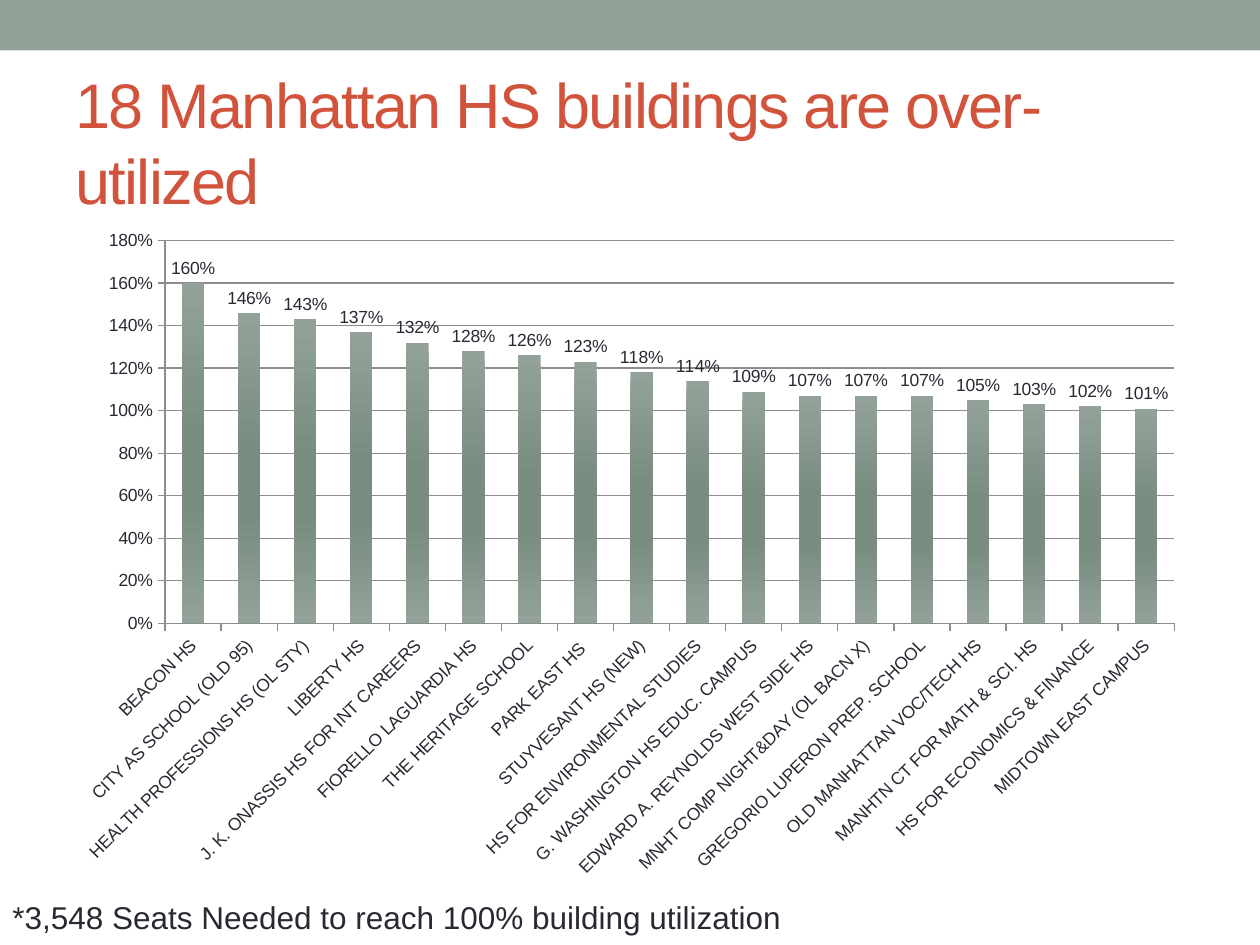
from dataclasses import dataclass

from lxml import etree
from pptx import Presentation
from pptx.chart.data import CategoryChartData
from pptx.dml.color import RGBColor
from pptx.enum.chart import XL_CHART_TYPE, XL_LABEL_POSITION, XL_TICK_MARK
from pptx.enum.shapes import MSO_SHAPE
from pptx.enum.text import MSO_ANCHOR, MSO_AUTO_SIZE, PP_ALIGN
from pptx.oxml import parse_xml
from pptx.oxml.ns import nsdecls, qn
from pptx.util import Inches, Pt

COLUMNS = XL_CHART_TYPE.COLUMN_CLUSTERED
ABOVE = XL_LABEL_POSITION.OUTSIDE_END
OUT, NO_TICK = XL_TICK_MARK.OUTSIDE, XL_TICK_MARK.NONE
RECTANGLE = MSO_SHAPE.RECTANGLE
MIDDLE, TOP = MSO_ANCHOR.MIDDLE, MSO_ANCHOR.TOP
LEFT = PP_ALIGN.LEFT
NO_FIT, GROW = MSO_AUTO_SIZE.NONE, MSO_AUTO_SIZE.SHAPE_TO_FIT_TEXT


@dataclass(frozen=True)
class Theme:
    font: str = "Arial"
    sage: str = "93A299"
    deep_sage: str = "788C80"
    red: str = "D2533C"
    ink: str = "292934"
    rule: str = "8C8C8C"
    title_size: int = 36
    note_size: int = 18
    chart_size: int = 10


THEME = Theme()
WIDTH, HEIGHT = Inches(10), Inches(7.5)
BAND_BOX = (0, 0, 1, 0.4 / 7.5)
TITLE_BOX = (0.05, 0.58 / 7.5, 0.9, 1.08 / 7.5)
CHART_BOX = (0.05, 1.75 / 7.5, 0.9, 5.33 / 7.5)
NOTE_BOX = (0, 7.08 / 7.5, 0.636, 0.4 / 7.5)
PLOT_SHARES = {"x": 0.09, "y": 0.03, "w": 0.89, "h": 0.57}

UTILIZATION = {
    "BEACON HS": 1.6,
    "CITY AS SCHOOL (OLD 95)": 1.46,
    "HEALTH PROFESSIONS HS (OL STY)": 1.43,
    "LIBERTY HS": 1.37,
    "J. K. ONASSIS HS FOR INT CAREERS": 1.32,
    "FIORELLO LAGUARDIA HS": 1.28,
    "THE HERITAGE SCHOOL": 1.26,
    "PARK EAST HS ": 1.23,
    "STUYVESANT HS (NEW)": 1.18,
    "HS FOR ENVIRONMENTAL STUDIES": 1.14,
    "G. WASHINGTON HS EDUC. CAMPUS": 1.09,
    "EDWARD A. REYNOLDS WEST SIDE HS": 1.07,
    "MNHT COMP NIGHT&DAY (OL BACN X)": 1.07,
    "GREGORIO LUPERON PREP. SCHOOL": 1.07,
    "OLD MANHATTAN VOC/TECH HS": 1.05,
    "MANHTN CT FOR MATH & SCI. HS": 1.03,
    "HS FOR ECONOMICS & FINANCE": 1.02,
    "MIDTOWN EAST CAMPUS": 1.01,
}


def apply(target, formats):
    for attribute, value in formats.items():
        setattr(target, attribute, value)


def place(box):
    left, top, width, height = box
    return (round(left * WIDTH), round(top * HEIGHT),
            round(width * WIDTH), round(height * HEIGHT))


def style_font(font, size, color):
    apply(font, {"name": THEME.font, "size": Pt(size), "bold": False})
    font.color.rgb = RGBColor.from_string(color)


def write_text(frame, wording, size, color, formats):
    apply(frame, formats)
    paragraph = frame.paragraphs[0]
    paragraph.alignment = LEFT
    run = paragraph.add_run()
    run.text = wording
    style_font(run.font, size, color)
    return run


def add_band(slide, box):
    band = slide.shapes.add_shape(RECTANGLE, *place(box))
    band.shadow.inherit = False
    band.fill.solid()
    band.fill.fore_color.rgb = RGBColor.from_string(THEME.sage)
    band.line.fill.background()


def add_title(slide, box):
    title = slide.shapes.title
    apply(title, dict(zip(("left", "top", "width", "height"), place(box))))
    heading = write_text(
        title.text_frame, "18 Manhattan HS buildings are over-utilized",
        THEME.title_size, THEME.red,
        {"vertical_anchor": MIDDLE, "word_wrap": True, "auto_size": NO_FIT})
    heading.font._element.set("spc", "-100")


def shade_bars(bars):
    bars.format.fill.gradient()
    bars.format.fill.gradient_angle = 270
    stops = bars.format._element.spPr.find(qn("a:gradFill")).find(qn("a:gsLst"))
    for stop in list(stops):
        stops.remove(stop)
    for position, color in ((0, THEME.sage), (45, THEME.deep_sage),
                            (65, THEME.deep_sage), (100, THEME.sage)):
        stop = etree.SubElement(stops, qn("a:gs"), pos=str(position * 1000))
        etree.SubElement(stop, qn("a:srgbClr"), val=color)


def fix_plot_area(chart):
    settings = "".join(f'<c:{key}Mode val="edge"/>' for key in "xy")
    settings += "".join(f'<c:{key} val="{share}"/>'
                        for key, share in PLOT_SHARES.items())
    layout = parse_xml(
        f'<c:layout {nsdecls("c")}><c:manualLayout>'
        f'<c:layoutTarget val="inner"/>{settings}</c:manualLayout></c:layout>')
    plot_area = chart._chartSpace.chart.plotArea
    for previous in plot_area.findall(qn("c:layout")):
        plot_area.remove(previous)
    plot_area.insert(0, layout)


def style_axes(chart):
    schools, percent = chart.category_axis, chart.value_axis
    apply(percent, {"minimum_scale": 0, "maximum_scale": 1.8,
                    "major_unit": 0.2, "has_major_gridlines": True})
    apply(percent.tick_labels, {"number_format": "0%",
                                "number_format_is_linked": False})
    for axis in (schools, percent):
        apply(axis, {"major_tick_mark": OUT, "minor_tick_mark": NO_TICK})
        style_font(axis.tick_labels.font, THEME.chart_size, THEME.ink)
    for ruled in (schools, percent, percent.major_gridlines):
        ruled.format.line.color.rgb = RGBColor.from_string(THEME.rule)
        ruled.format.line.width = Pt(0.75)
    slant = schools._element.find(qn("c:txPr")).find(qn("a:bodyPr"))
    slant.set("rot", str(-45 * 60000))
    slant.set("vert", "horz")


def add_utilization_chart(slide, box):
    data = CategoryChartData(number_format="0%")
    data.categories = list(UTILIZATION)
    data.add_series("Series 1", list(UTILIZATION.values()))
    chart = slide.shapes.add_chart(COLUMNS, *place(box), data).chart
    apply(chart, {"has_legend": False, "has_title": False})
    style_font(chart.font, THEME.chart_size, THEME.ink)
    plot = chart.plots[0]
    apply(plot, {"gap_width": 150, "vary_by_categories": False,
                 "has_data_labels": True})
    apply(plot.data_labels, {"show_value": True, "number_format": "0%",
                             "number_format_is_linked": False,
                             "position": ABOVE})
    style_font(plot.data_labels.font, THEME.chart_size, THEME.ink)
    shade_bars(plot.series[0])
    style_axes(chart)
    fix_plot_area(chart)


def add_note(slide, box):
    note = slide.shapes.add_textbox(*place(box))
    write_text(note.text_frame,
               "*3,548 Seats Needed to reach 100% building utilization",
               THEME.note_size, THEME.ink,
               {"vertical_anchor": TOP, "word_wrap": False, "auto_size": GROW})


def main():
    deck = Presentation()
    apply(deck, {"slide_width": WIDTH, "slide_height": HEIGHT})
    slide = deck.slides.add_slide(deck.slide_layouts.get_by_name("Title Only"))
    add_band(slide, BAND_BOX)
    add_title(slide, TITLE_BOX)
    add_utilization_chart(slide, CHART_BOX)
    add_note(slide, NOTE_BOX)
    deck.save("out.pptx")


if __name__ == "__main__":
    main()
